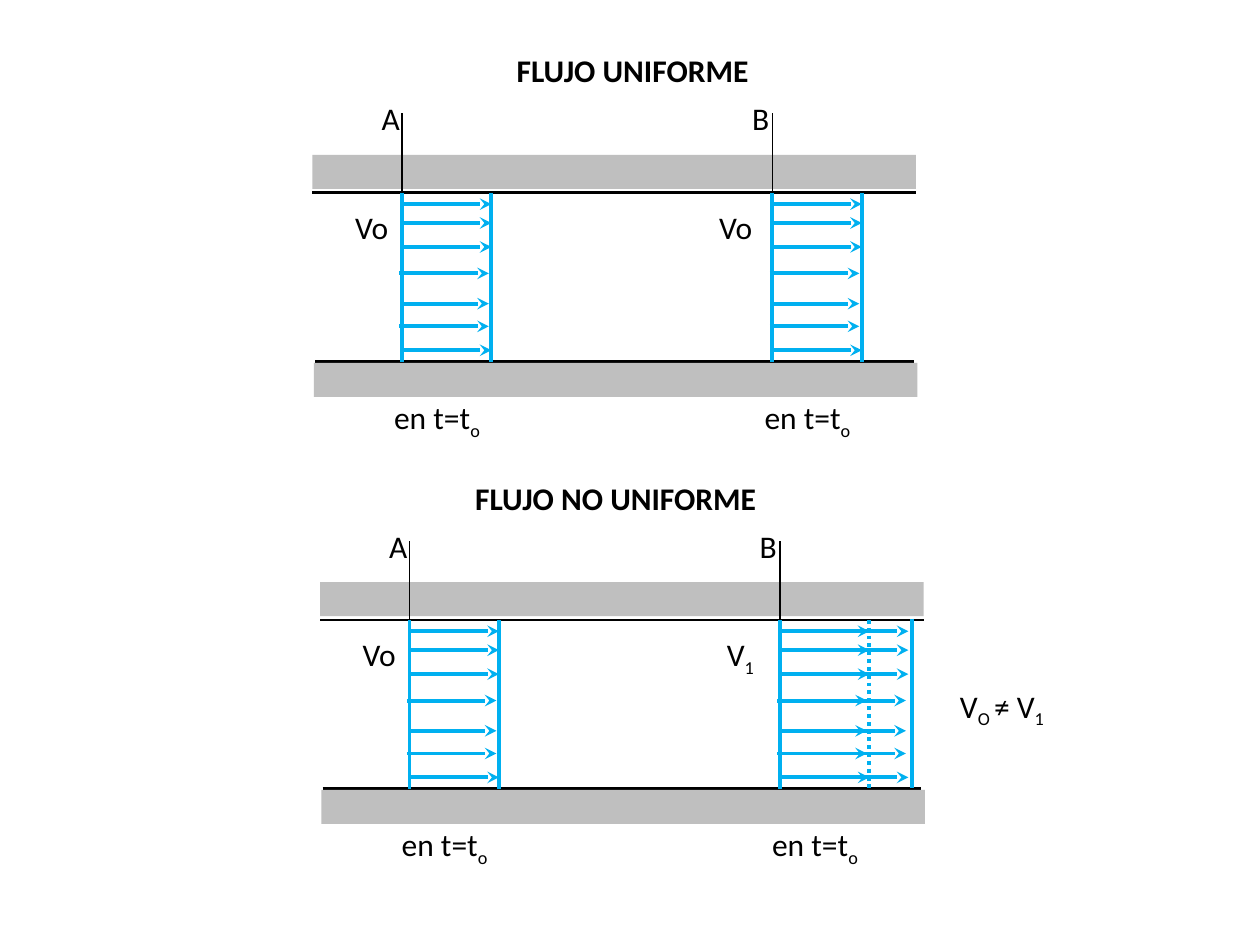
from lxml.etree import SubElement
from pptx import Presentation
from pptx.dml.color import RGBColor
from pptx.enum.dml import MSO_LINE
from pptx.enum.shapes import MSO_CONNECTOR, MSO_SHAPE
from pptx.enum.text import MSO_AUTO_SIZE, PP_ALIGN
from pptx.oxml.ns import qn
from pptx.util import Pt

PX = 9144  # 100 px to the inch
COLORS = {"ink": "000000", "flow": "00B0F0", "wall": "BFBFBF"}
FONT = "Calibri"

SPAN = 479    # length of the channel
DEPTH = 134   # distance between the channel lines
REACH = 71    # length of a velocity arrow
SHIFT = 31    # start of the second set of arrows
FRONT = 105   # front of the faster profile
TITLE_END = 356
# height below the upper line, offset of the start, offset of the tip
ARROWS = [(9, 0, 0), (24, 0, 0), (43, 0, 0), (64, -2, -2),
          (88, -1, -2), (106, -2, -2), (125, 0, 0)]
TIME = ("en t=t", "o")


def color(name):
    return RGBColor.from_string(COLORS[name])


def add_text(slide, x, y, width, parts, bold=False, align=PP_ALIGN.LEFT):
    """Add a one-line label; every second part is a subscript."""
    box = slide.shapes.add_textbox(x * PX, y * PX, width * PX, 40 * PX)
    frame = box.text_frame
    frame.word_wrap = False
    frame.auto_size = MSO_AUTO_SIZE.SHAPE_TO_FIT_TEXT
    line = frame.paragraphs[0]
    line.alignment = align
    for index, part in enumerate(parts):
        run = line.add_run()
        run.text = part
        font = run.font
        font.name, font.size, font.bold = FONT, Pt(18), bold
        font.color.rgb = color("ink")
        if index % 2:
            run._r.get_or_add_rPr().set("baseline", "-25000")


def add_line(slide, start, end, tint="flow", weight=2.25, dash=None, arrow=False):
    points = [value * PX for value in (*start, *end)]
    link = slide.shapes.add_connector(MSO_CONNECTOR.STRAIGHT, *points)
    link.line.color.rgb = color(tint)
    link.line.width = Pt(weight)
    if dash:
        link.line.dash_style = dash
    if arrow:
        SubElement(link.line._get_or_add_ln(), qn("a:tailEnd"), type="stealth")
    SubElement(link._element.spPr, qn("a:effectLst"))


def add_wall(slide, x, y):
    wall = slide.shapes.add_shape(MSO_SHAPE.RECTANGLE,
                                  x * PX, y * PX, SPAN * PX, 27 * PX)
    wall.shadow.inherit = False
    wall.fill.solid()
    wall.fill.fore_color.rgb = color("wall")
    wall.line.fill.background()


def add_arrows(slide, x, y):
    for drop, tail, tip in ARROWS:
        add_line(slide, (x + tail, y + drop), (x + REACH + tip, y + drop),
                 arrow=True)


def add_front(slide, x, y, dash=None):
    add_line(slide, (x, y), (x, y + DEPTH), dash=dash)


def add_station(slide, x, y, name, speed, inset, faster=False):
    """Draw a section of the channel with its velocity profile."""
    add_front(slide, x, y)
    add_front(slide, x + REACH, y, MSO_LINE.ROUND_DOT if faster else None)
    add_arrows(slide, x, y)
    if faster:
        add_front(slide, x + FRONT, y - 1)
        add_arrows(slide, x + SHIFT, y)
    add_line(slide, (x, y), (x, y - 63), "ink", 0.75)
    add_text(slide, x - 26, y - 79, 35, [name])
    add_text(slide, x - inset, y + 7, 47 if len(speed) == 1 else 43, speed)
    add_text(slide, x - 16, y + 158, 90, TIME)


def add_channel(slide, x, y, title, width, speed, faster=False):
    add_text(slide, x + TITLE_END - width, y - 117, width, [title],
             bold=True, align=PP_ALIGN.RIGHT)
    add_line(slide, (x, y), (x + SPAN, y), "ink", 1.5)
    add_line(slide, (x + 2, y + DEPTH), (x + SPAN - 2, y + DEPTH), "ink", 1.5)
    add_wall(slide, x, y - 30)
    add_wall(slide, x + 1, y + DEPTH + 1)
    add_station(slide, x + 71, y, "A", ["Vo"], 47)
    add_station(slide, x + 365, y, "B", speed, 52, faster)


def main():
    deck = Presentation()
    deck.slide_width, deck.slide_height = 1000 * PX, 750 * PX
    slide = deck.slides.add_slide(deck.slide_layouts[6])
    add_channel(slide, 248, 153, "FLUJO UNIFORME", 206, ["Vo"])
    add_channel(slide, 254, 492, "FLUJO NO UNIFORME", 245, ["V", "1"], faster=True)
    add_text(slide, 752, 540, 91, ["V", "O ", "≠ V", "1"])
    deck.save("out.pptx")


if __name__ == "__main__":
    main()
